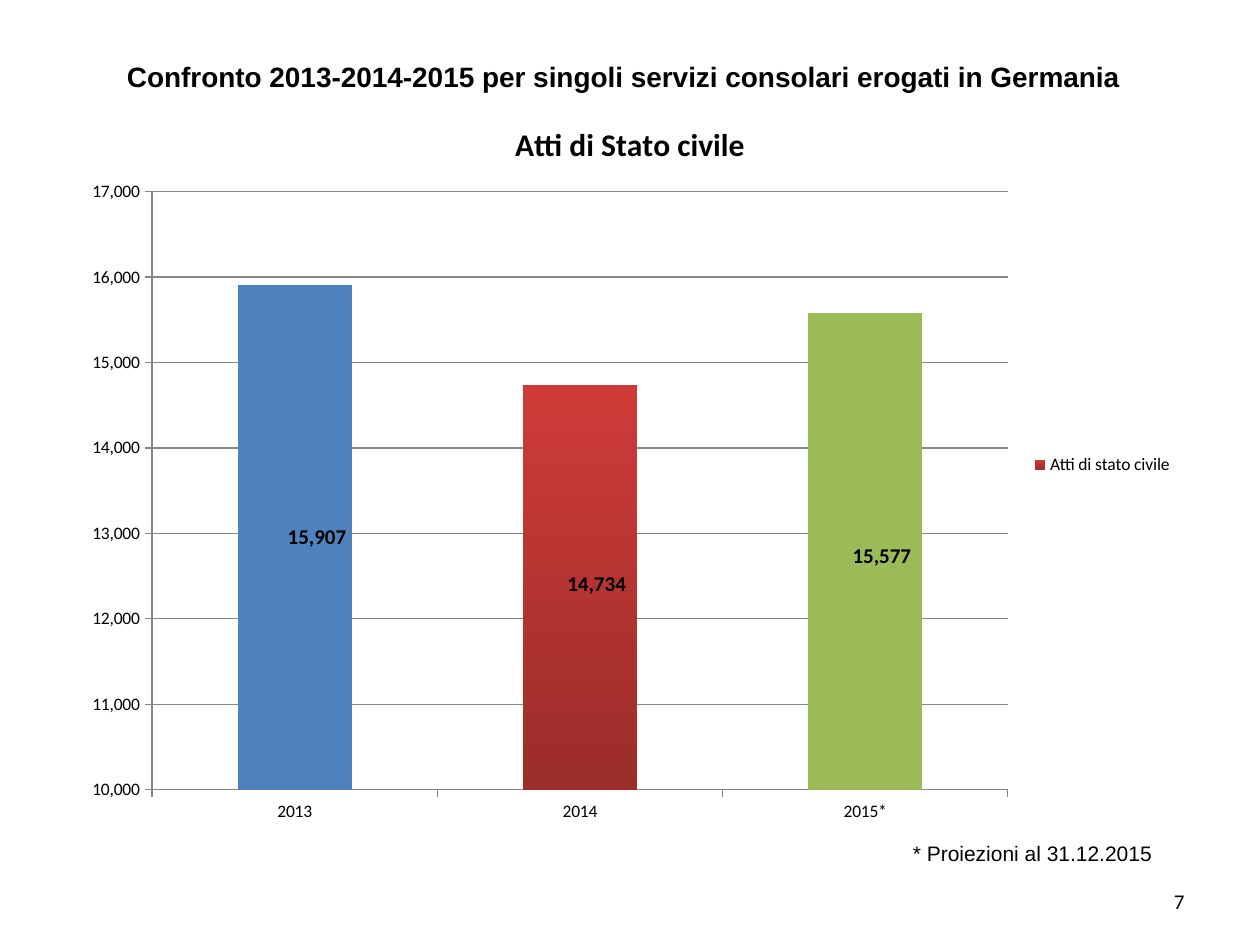
import pptx
import pptx.chart.data
import pptx.dml.color
import pptx.enum.chart
import pptx.enum.text
import pptx.oxml
import pptx.oxml.ns
import pptx.util
from pptx.util import Inches, Pt

BLACK = pptx.dml.color.RGBColor(0x00, 0x00, 0x00)
GRAY = pptx.dml.color.RGBColor(0x86, 0x86, 0x86)
BLUE = pptx.dml.color.RGBColor(0x4F, 0x81, 0xBD)
GREEN = pptx.dml.color.RGBColor(0x9B, 0xBB, 0x59)
DARK_RED = pptx.dml.color.RGBColor(0x9B, 0x2D, 0x2A)
BRIGHT_RED = pptx.dml.color.RGBColor(0xCE, 0x3B, 0x37)

ALIGN = pptx.enum.text.PP_ALIGN
ANCHOR = pptx.enum.text.MSO_ANCHOR
NUMBER_FORMAT = "#,##0"
VALUES = {"2013": 15907, "2014": 14734, "2015*": 15577}
LABEL_OFFSETS = [(0.02, 0), (0.015, -0.005), (0.015, 0.007)]
PLOT_LAYOUT = {"x": 0.07, "y": 0.13, "w": 0.77, "h": 0.81}


def set_attributes(target, values):
    for name, value in values.items():
        setattr(target, name, value)


def set_font(font, size, name="Calibri", bold=False):
    set_attributes(font, {"size": Pt(size), "name": name, "bold": bold})
    font.color.rgb = BLACK


def add_text(slide, box, text, size, name, alignment, bold=False,
             anchor=ANCHOR.TOP, space_before=0):
    shape = slide.shapes.add_textbox(*map(Inches, box))
    set_attributes(shape.text_frame, {"word_wrap": True, "vertical_anchor": anchor})
    paragraph = shape.text_frame.paragraphs[0]
    set_attributes(paragraph, {"alignment": alignment, "space_before": Pt(space_before)})
    run = paragraph.add_run()
    run.text = text
    set_font(run.font, size, name, bold)


def manual_layout(modes, values):
    namespace = pptx.oxml.ns.nsdecls("c")
    settings = "".join(f'<c:{key} val="{value}"/>' for key, value in (modes | values).items())
    return pptx.oxml.parse_xml(
        f"<c:layout {namespace}><c:manualLayout>{settings}</c:manualLayout></c:layout>"
    )


def place_plot(chart):
    plot_area = chart.plots[0]._element.getparent()
    for layout in plot_area.findall(pptx.oxml.ns.qn("c:layout")):
        plot_area.remove(layout)
    modes = {"layoutTarget": "inner", "xMode": "edge", "yMode": "edge"}
    plot_area.insert(0, manual_layout(modes, PLOT_LAYOUT))


def format_axes(chart):
    value_axis = chart.value_axis
    set_attributes(value_axis, {"minimum_scale": 10000, "maximum_scale": 17000,
                                "major_unit": 1000, "has_major_gridlines": True})
    set_attributes(value_axis.tick_labels,
                   {"number_format": NUMBER_FORMAT, "number_format_is_linked": False})
    for axis in (chart.category_axis, value_axis):
        axis.major_tick_mark = pptx.enum.chart.XL_TICK_MARK.OUTSIDE
        set_font(axis.tick_labels.font, 10)
    for part in (chart.category_axis, value_axis, value_axis.major_gridlines):
        set_attributes(part.format.line, {"width": Pt(0.75)})
        part.format.line.color.rgb = GRAY


def format_series(series):
    series.invert_if_negative = False
    fill = series.format.fill
    fill.gradient()
    fill.gradient_angle = 90
    for stop, color in zip(fill.gradient_stops, (DARK_RED, BRIGHT_RED)):
        stop.color.rgb = color
    for index, color in {0: BLUE, 2: GREEN}.items():
        point_fill = series.points[index].format.fill
        point_fill.solid()
        point_fill.fore_color.rgb = color


def format_labels(series):
    labels = series.data_labels
    set_attributes(labels, {"show_value": True, "number_format": NUMBER_FORMAT,
                            "number_format_is_linked": False})
    set_font(labels.font, 12, bold=True)
    for index, (x, y) in enumerate(LABEL_OFFSETS):
        label = series.points[index].data_label
        label.position = pptx.enum.chart.XL_LABEL_POSITION.CENTER
        set_font(label.font, 12, bold=True)
    for element, (x, y) in zip(labels._element.findall(pptx.oxml.ns.qn("c:dLbl")), LABEL_OFFSETS):
        element.insert(1, manual_layout({}, {"x": x, "y": y}))


def add_column_chart(slide):
    data = pptx.chart.data.CategoryChartData(number_format=NUMBER_FORMAT)
    data.categories = list(VALUES)
    data.add_series("Atti di stato civile", VALUES.values())
    chart = slide.shapes.add_chart(
        pptx.enum.chart.XL_CHART_TYPE.COLUMN_STACKED,
        Inches(0.59), Inches(0.76), Inches(8.82), Inches(5.86), data,
    ).chart
    set_font(chart.font, 10)
    chart.has_title = True
    title_run = chart.chart_title.text_frame.paragraphs[0].add_run()
    title_run.text = "Atti di Stato civile"
    set_font(title_run.font, 18, bold=True)
    chart.has_legend = True
    set_attributes(chart.legend, {"position": pptx.enum.chart.XL_LEGEND_POSITION.RIGHT,
                                  "include_in_layout": False})
    set_font(chart.legend.font, 10)
    set_attributes(chart.plots[0], {"gap_width": 150, "overlap": 100,
                                    "vary_by_categories": False})
    format_axes(chart)
    format_series(chart.plots[0].series[0])
    format_labels(chart.plots[0].series[0])
    place_plot(chart)


def main():
    presentation = pptx.Presentation()
    set_attributes(presentation, {"slide_width": Inches(10), "slide_height": Inches(7.5)})
    slide = presentation.slides.add_slide(presentation.slide_layouts[6])
    add_text(slide, (7.17, 6.95, 2.33, 0.4), "7", 12, "Calibri", ALIGN.RIGHT,
             anchor=ANCHOR.MIDDLE)
    add_text(slide, (0.07, 0.42, 9.76, 0.37),
             "Confronto 2013-2014-2015 per singoli servizi consolari erogati in Germania",
             16, "Arial", ALIGN.CENTER, bold=True, space_before=8)
    add_text(slide, (7.13, 6.62, 2.13, 0.3), "* Proiezioni al 31.12.2015",
             12, "Arial", ALIGN.CENTER, space_before=6)
    add_column_chart(slide)
    presentation.save("out.pptx")


if __name__ == "__main__":
    main()
